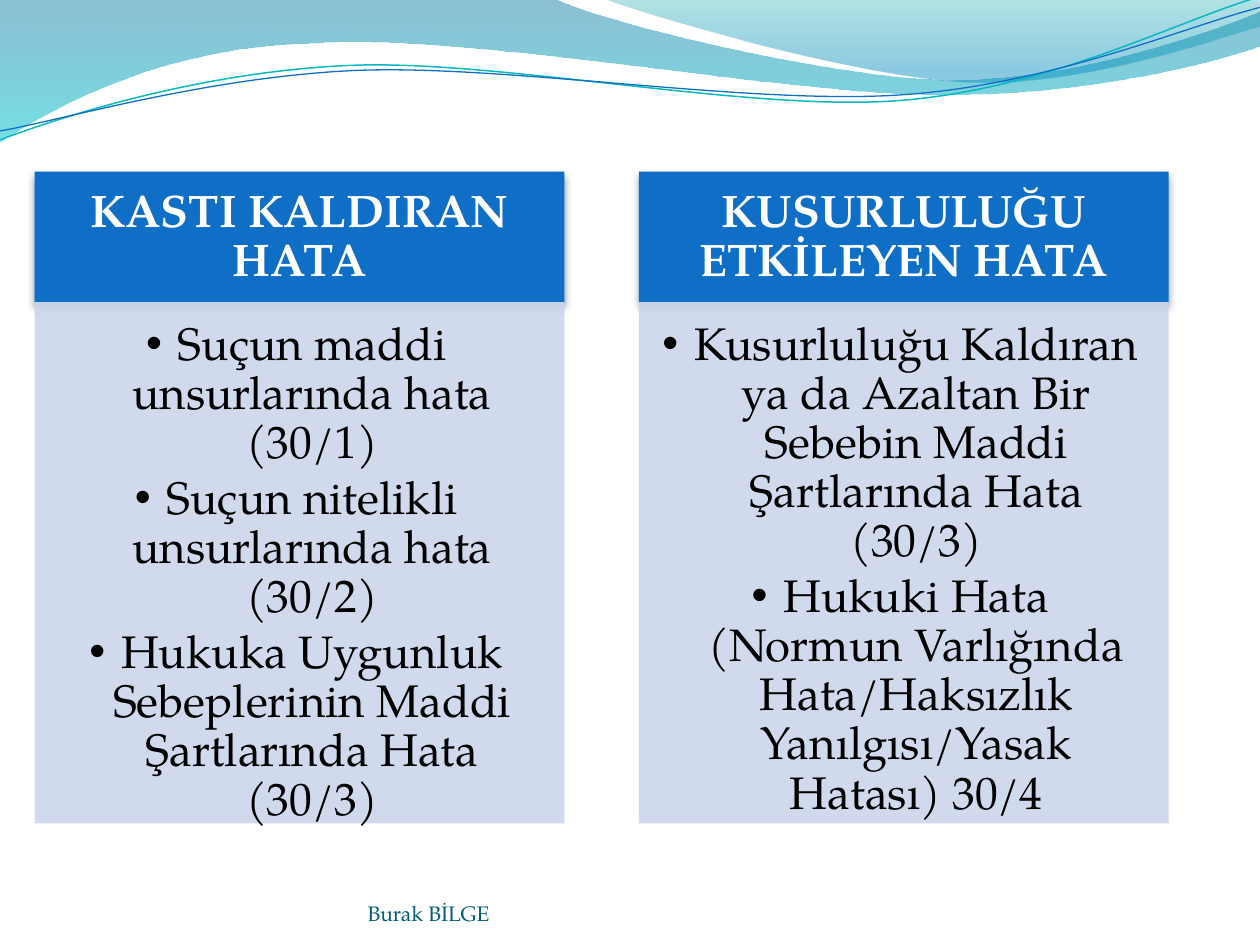
from lxml.etree import SubElement
from pptx import Presentation
from pptx.dml.color import RGBColor
from pptx.enum.text import MSO_ANCHOR, MSO_AUTO_SIZE, PP_ALIGN
from pptx.oxml.ns import qn
from pptx.util import Cm, Pt

FONT = "TeX Gyre Pagella"
BLUE = RGBColor(0x0F, 0x6F, 0xC6)
PALE = RGBColor(0xCC, 0xD5, 0xEA)
TEAL = RGBColor(0x0A, 0xB8, 0xBF)
INK = RGBColor(0x04, 0x5D, 0x75)
WHITE = RGBColor(0xFF, 0xFF, 0xFF)
BLACK = RGBColor(0, 0, 0)
DEEP = RGBColor(0x00, 0x74, 0xA1)
AQUA = RGBColor(0x00, 0xC6, 0xCF)
SEA = RGBColor(0x00, 0xA1, 0xA9)
SKY = RGBColor(0x00, 0x8B, 0xBF)
SHADE = RGBColor(0x04, 0x27, 0x47)

# Each step is one point (line) or three points (curve), in cm
BAND = [[(0, 0)], [(11.18, -0.03)],
        [(12.09, 0.43), (16.87, 1.6), (19.25, 1.6)],
        [(21.67, 1.6), (24.33, 0.66), (25.4, 0.23)], [(25.43, 0.91)],
        [(24.97, 1.12), (22.1, 1.93), (18.95, 1.91)],
        [(15.8, 1.91), (9.7, 0.71), (6.53, 0.86)],
        [(3.28, 0.91), (1.17, 2.11), (-0.03, 2.87)]]
CREST = [[(12.17, -0.03)],
         [(12.93, 0.28), (17.32, 1.57), (19.53, 1.65)],
         [(21.74, 1.75), (24.41, 0.81), (25.4, 0.53)], [(25.4, 0)]]
UPPER = [[(0, 2.82)],
         [(1.22, 2.36), (4.01, 1.45), (7.04, 1.32)],
         [(10.03, 1.19), (15.06, 2.26), (18.11, 2.03)],
         [(21.16, 1.8), (23.83, 0.38), (25.35, -0.05)]]
LOWER = [[(0, 2.64)],
         [(1.19, 2.44), (4.17, 1.55), (7.19, 1.42)],
         [(10.24, 1.3), (15.16, 2.13), (18.21, 1.91)],
         [(21.23, 1.7), (23.9, 0.53), (25.4, 0.15)]]

COLUMNS = [
    ("KASTI KALDIRAN HATA",
     ["Suçun maddi unsurlarında hata (30/1)",
      "Suçun nitelikli unsurlarında hata (30/2)",
      "Hukuka Uygunluk Sebeplerinin Maddi Şartlarında Hata (30/3)"]),
    ("KUSURLULUĞU ETKİLEYEN HATA",
     ["Kusurluluğu Kaldıran ya da Azaltan Bir Sebebin Maddi "
      "Şartlarında Hata (30/3)",
      "Hukuki Hata (Normun Varlığında Hata/Haksızlık Yanılgısı/Yasak "
      "Hatası) 30/4"]),
]


def apply(item, form):
    for name, value in form.items():
        setattr(item, name, value)


def place(shape, left, top, width, height):
    apply(shape, dict(left=Cm(left), top=Cm(top),
                      width=Cm(width), height=Cm(height)))


def frame(shape, anchor, left, top, right, bottom):
    apply(shape.text_frame, dict(
        word_wrap=True, auto_size=MSO_AUTO_SIZE.NONE, vertical_anchor=anchor,
        margin_left=Cm(left), margin_top=Cm(top),
        margin_right=Cm(right), margin_bottom=Cm(bottom)))


def write(shape, lines, size, color, bold=False, **para):
    text = shape.text_frame
    text.text = "\n".join(lines)
    for item in text.paragraphs:
        apply(item, para)
        font = item.runs[0].font
        apply(font, dict(name=FONT, size=Pt(size), bold=bold))
        font.color.rgb = color


def fade(shape, *rates):
    colors = shape._element.spPr.iter(qn("a:srgbClr"))
    for color, rate in zip(list(colors), rates):
        SubElement(color, qn("a:alpha"), val=str(rate * 1000))


def outline(slide, box, steps, close):
    dots = [(Cm(box[0] + x), Cm(box[1] + y)) for step in steps
            for x, y in step]
    pen = slide.shapes.build_freeform(*dots[0])
    pen.add_line_segments(dots[1:], close=close)
    shape = pen.convert_to_shape()
    shape.shadow.inherit = False
    # Join each run of three points into one Bezier curve
    parts = iter(list(shape._element.spPr.iter(qn("a:lnTo"))))
    for step in steps[1:]:
        first, *rest = [next(parts) for _ in step]
        if rest:
            first.tag = qn("a:cubicBezTo")
        for part in rest:
            first.append(part[0])
            part.getparent().remove(part)
    return shape


def waves(slide, box):
    # Shaded bands
    for steps, colors, end, rates in ((BAND, (DEEP, AQUA), 1, (45, 55)),
                                      (CREST, (SEA, SKY), 0.8, (30, 45))):
        shape = outline(slide, box, steps, True)
        shape.line.fill.background()
        shape.fill.gradient()
        shape.fill.gradient_angle = 270
        for stop, color, spot in zip(shape.fill.gradient_stops, colors,
                                     (0, end)):
            stop.color.rgb = color
            stop.position = spot
        fade(shape, *rates)
    # Thin lines
    for steps, color, width in ((UPPER, TEAL, 0.85), (LOWER, BLUE, 0.75)):
        shape = outline(slide, box, steps, False)
        shape.fill.background()
        shape.line.color.rgb = color
        shape.line.width = Pt(width)


def column(head, body, box, title, points):
    left, top, width, height = box
    bar = 2.63
    form = dict(alignment=PP_ALIGN.CENTER, line_spacing=0.9,
                space_before=Pt(0))
    # Heading bar with a soft shadow
    place(head, left, top, width, bar)
    frame(head, MSO_ANCHOR.MIDDLE, 0.51, 0.3, 0.51, 0.3)
    write(head, [title], 26, WHITE, True, **form)
    # List panel
    place(body, left, top + bar, width, height - bar)
    frame(body, MSO_ANCHOR.TOP, 0.38, 0.38, 0.51, 0.58)
    write(body, points, 26, BLACK, space_after=Pt(3.9), **form)
    for item in body.text_frame.paragraphs:
        props = item._p.get_or_add_pPr()
        props.set("marL", str(Cm(0.64)))
        props.set("indent", str(Cm(-0.64)))
        SubElement(props, qn("a:buChar"), char="•")
    for shape, color in ((head, BLUE), (body, PALE)):
        shape.fill.solid()
        shape.fill.fore_color.rgb = color
        shape.line.fill.background()
    fade(body, 90)
    effects = SubElement(head._element.spPr, qn("a:effectLst"))
    shadow = SubElement(effects, qn("a:outerShdw"), blurRad=str(Pt(4.5)),
                        dist=str(Pt(3)), dir="5400000", rotWithShape="0")
    color = SubElement(shadow, qn("a:srgbClr"), val=str(SHADE))
    SubElement(color, qn("a:alpha"), val="48000")


def footer(slide, box):
    note = slide.shapes.add_textbox(*map(Cm, box))
    frame(note, MSO_ANCHOR.BOTTOM, 0, 0, 0, 0)
    write(note, ["Burak BİLGE"], 12, INK)


def main():
    deck = Presentation()
    apply(deck, dict(slide_width=Cm(25.4), slide_height=Cm(19.05)))
    slide = deck.slides.add_slide(deck.slide_layouts[4])
    title = slide.shapes.title._element
    title.getparent().remove(title)
    waves(slide, (0, 0))
    slots = {slot.placeholder_format.idx: slot for slot in slide.placeholders}
    for n, (name, points) in enumerate(COLUMNS):
        box = (0.7 + 12.18 * n, 3.46, 10.68, 13.14)
        column(slots[2 * n + 1], slots[2 * n + 2], box, name, points)
    footer(slide, (7.41, 17.65, 9.32, 1.02))
    deck.save("out.pptx")


if __name__ == "__main__":
    main()
